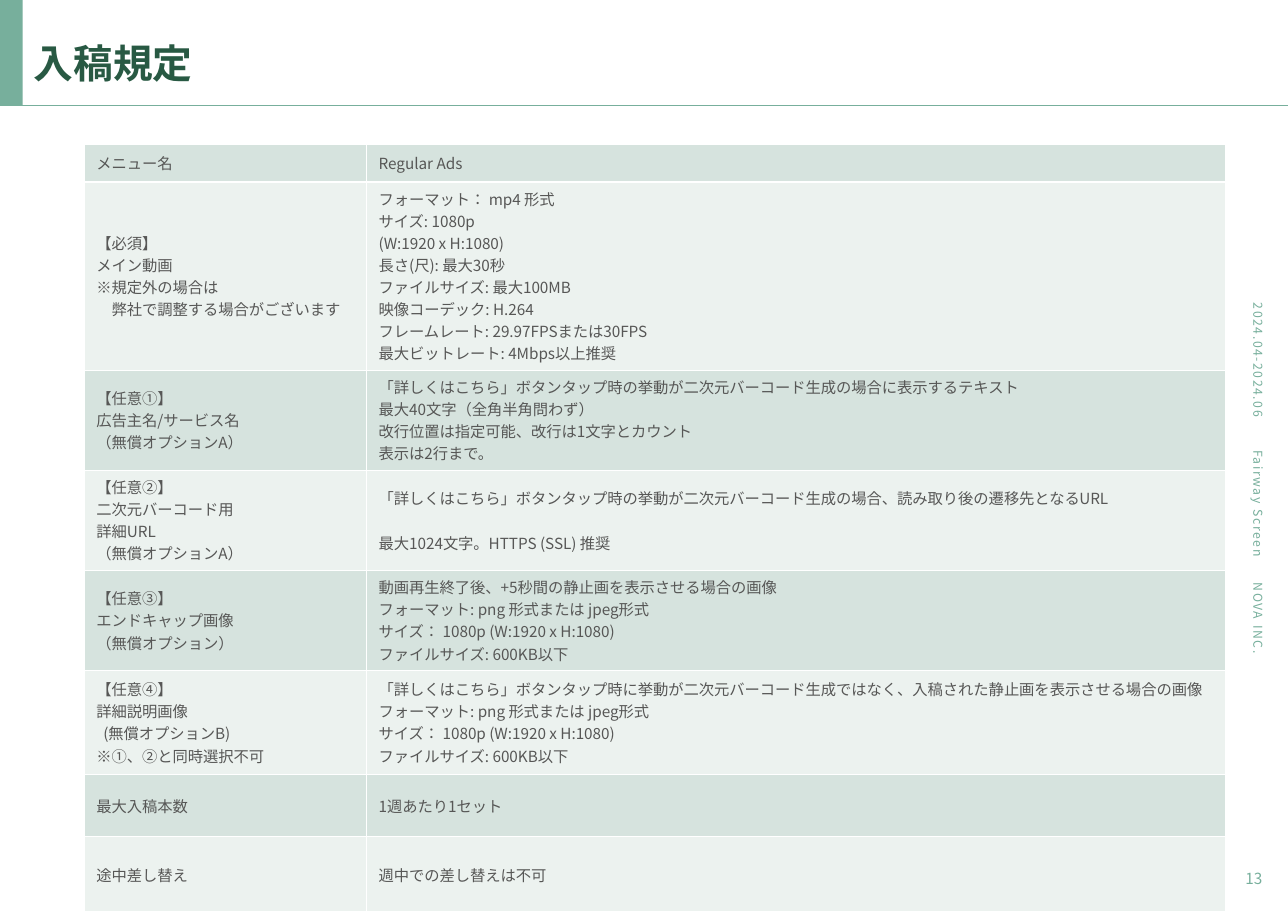
import pptx
import pptx.util
import pptx.dml.color
import pptx.enum.lang
import pptx.enum.shapes
import pptx.enum.text
import pptx.oxml
import pptx.oxml.ns

Pt = pptx.util.Pt
RGB = pptx.dml.color.RGBColor
ALIGN = pptx.enum.text.PP_ALIGN
ANCHOR = pptx.enum.text.MSO_ANCHOR
TONGUE = pptx.enum.lang.MSO_LANGUAGE_ID.JAPANESE

FONT = "Noto Sans CJK JP"
MINT = RGB(0x77, 0xAF, 0x9C)
FOREST = RGB(0x28, 0x59, 0x43)
GRAY = RGB(0x57, 0x57, 0x56)
BANDS = [RGB(0xD6, 0xE3, 0xDE), RGB(0xEC, 0xF2, 0xEF)]

TITLE = "入稿規定"
PAGE = "13"
# Text and vertical centre of each sideways label
LABELS = [("2024.04-2024.06", 235.25), ("Fairway Screen", 329), ("NOVA INC.", 404)]

IMAGE = [
    "フォーマット: png 形式または jpeg形式",
    "サイズ： 1080p (W:1920 x H:1080)",
    "ファイルサイズ: 600KB以下",
]
# Row height, left cell, right cell; a line may carry its own format
ROWS = [
    (24.5, ["メニュー名"], ["Regular Ads"]),
    (123, ["【必須】", "メイン動画", "※規定外の場合は",
           ("弊社で調整する場合がございます", {"indent": 10})],
     ["フォーマット： mp4 形式", "サイズ: 1080p", "(W:1920 x H:1080)",
      "長さ(尺): 最大30秒", "ファイルサイズ: 最大100MB",
      "映像コーデック: H.264", "フレームレート: 29.97FPSまたは30FPS",
      "最大ビットレート: 4Mbps以上推奨"]),
    (65.4, ["【任意①】", "広告主名/サービス名", "（無償オプションA）"],
     ["「詳しくはこちら」ボタンタップ時の挙動が二次元バーコード生成の場合に表示するテキスト",
      "最大40文字（全角半角問わず）",
      "改行位置は指定可能、改行は1文字とカウント",
      "表示は2行まで。"]),
    (65.4, ["【任意②】", "二次元バーコード用", "詳細URL", "（無償オプションA）"],
     ["「詳しくはこちら」ボタンタップ時の挙動が二次元バーコード生成の場合、読み取り後の遷移先となるURL",
      ("最大1024文字。HTTPS (SSL) 推奨", {"before": 14.5})]),
    (65.4, ["【任意③】", "エンドキャップ画像", "（無償オプション）"],
     ["動画再生終了後、+5秒間の静止画を表示させる場合の画像", *IMAGE]),
    (68, ["【任意④】", "詳細説明画像",
          ("(無償オプションB)", {"indent": 4.5}), "※①、②と同時選択不可"],
     ["「詳しくはこちら」ボタンタップ時に挙動が二次元バーコード生成ではなく、入稿された静止画を表示させる場合の画像",
      *IMAGE]),
    (40.8, ["最大入稿本数"], ["1週あたり1セット"]),
    (50.4, ["途中差し替え"], ["週中での差し替えは不可"]),
]

WIDE, HIGH = 841.68, 595.44
HEAD, BAR = 68.7, 14.8
COLS = [184.5, 561]


def put(para, text, size=10, color=GRAY, bold=False, align=ALIGN.LEFT,
        indent=0, before=0, line=None, track=0):
    para.alignment = align
    if indent:
        para._p.get_or_add_pPr().set("marL", str(Pt(indent)))
    if before:
        para.space_before = Pt(before)
    if line:
        para.line_spacing = line
    run = para.add_run()
    run.text = text
    font = run.font
    font.name, font.size, font.bold = FONT, Pt(size), bold
    font.language_id = TONGUE
    font.color.rgb = color
    props = run._r.get_or_add_rPr()
    east = pptx.oxml.parse_xml(
        f'<a:ea {pptx.oxml.ns.nsdecls("a")} typeface="{FONT}"/>')
    props.find(pptx.oxml.ns.qn("a:latin")).addnext(east)
    if track:
        props.set("spc", str(track * 100))


def label(slide, box, text, anchor=ANCHOR.TOP, turn=0, **form):
    shape = slide.shapes.add_textbox(*map(Pt, box))
    shape.rotation = turn
    body = shape.text_frame
    body.word_wrap = True
    body.vertical_anchor = anchor
    put(body.paragraphs[0], text, **form)


def edge(cell):
    """Give the cell thin white borders."""
    props = cell._tc.get_or_add_tcPr()
    for side in ("lnL", "lnR", "lnT", "lnB"):
        props.append(pptx.oxml.parse_xml(
            f'<a:{side} {pptx.oxml.ns.nsdecls("a")} w="{Pt(1)}"><a:solidFill>'
            f'<a:srgbClr val="FFFFFF"/></a:solidFill></a:{side}>'))


def frame(slide):
    """Draw the header bar and rule, the side labels and the page number."""
    label(slide, (643, 564.5, 189, 31), PAGE, color=MINT, align=ALIGN.RIGHT)
    for text, mid in LABELS:
        label(slide, (770.5, mid - 8.5, 103, 17), text, turn=90,
              size=8, color=MINT, align=ALIGN.CENTER, track=1)
    rule = slide.shapes.add_connector(
        pptx.enum.shapes.MSO_CONNECTOR.STRAIGHT, 0, Pt(HEAD), Pt(WIDE), Pt(HEAD))
    rule.line.color.rgb = MINT
    rule.line.width = Pt(0.5)
    rule._element.spPr.append(pptx.oxml.parse_xml(
        f'<a:effectLst {pptx.oxml.ns.nsdecls("a")}/>'))
    bar = slide.shapes.add_shape(
        pptx.enum.shapes.MSO_SHAPE.RECTANGLE, 0, 0, Pt(BAR), Pt(HEAD))
    bar.shadow.inherit = False
    bar.fill.solid()
    bar.fill.fore_color.rgb = MINT
    bar.line.fill.background()


def rules(slide):
    """Build the table of submission rules."""
    high = sum(row[0] for row in ROWS)
    grid = slide.shapes.add_table(len(ROWS), len(COLS), Pt(55.25), Pt(94.5),
                                  Pt(sum(COLS)), Pt(high)).table
    for col, width in zip(grid.columns, COLS):
        col.width = Pt(width)
    for r, (tall, *texts) in enumerate(ROWS):
        grid.rows[r].height = Pt(tall)
        for c, lines in enumerate(texts):
            cell = grid.cell(r, c)
            edge(cell)
            cell.fill.solid()
            cell.fill.fore_color.rgb = BANDS[r % 2]
            cell.vertical_anchor = ANCHOR.MIDDLE
            cell.margin_left = cell.margin_right = Pt(7.75)
            cell.margin_top = cell.margin_bottom = Pt(3.75)
            body = cell.text_frame
            for i, item in enumerate(lines):
                text, form = (item, {}) if isinstance(item, str) else item
                para = body.add_paragraph() if i else body.paragraphs[0]
                put(para, text, **form)


def main():
    deck = pptx.Presentation()
    deck.slide_width, deck.slide_height = Pt(WIDE), Pt(HIGH)
    slide = deck.slides.add_slide(deck.slide_layouts[6])
    frame(slide)
    label(slide, (BAR, 17.5, WIDE - BAR, 51), TITLE, anchor=ANCHOR.MIDDLE,
          size=26, color=FOREST, bold=True, line=0.9)
    rules(slide)
    deck.save("out.pptx")


if __name__ == "__main__":
    main()
